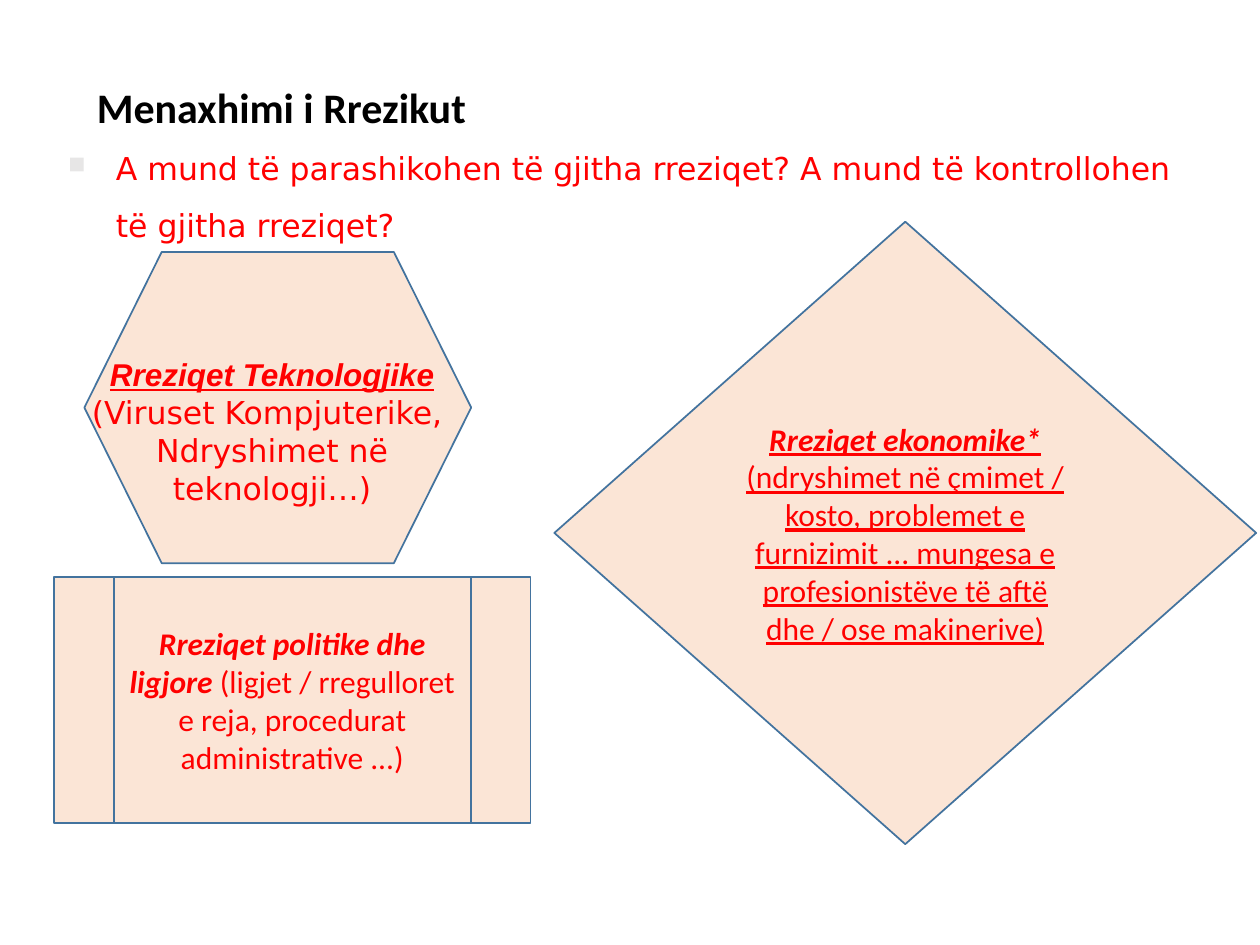
from lxml import etree
from pptx import Presentation
from pptx.dml.color import RGBColor
from pptx.enum.shapes import MSO_SHAPE
from pptx.enum.text import MSO_ANCHOR, MSO_AUTO_SIZE, PP_ALIGN
from pptx.oxml.ns import qn
from pptx.util import Inches, Pt

PROCESS = MSO_SHAPE.FLOWCHART_PREDEFINED_PROCESS
PREPARATION = MSO_SHAPE.FLOWCHART_PREPARATION
DECISION = MSO_SHAPE.FLOWCHART_DECISION
LEFT, CENTER = PP_ALIGN.LEFT, PP_ALIGN.CENTER
TOP, MIDDLE = MSO_ANCHOR.TOP, MSO_ANCHOR.MIDDLE

COLORS = {"text": "FF0000", "heading": "000000", "fill": "FBE5D6",
          "line": "43739E", "bullet": "E7E6E6"}

# A run is (text, font name, styles), with styles from b, i and u.
QUESTION = [[("A mund të parashikohen të gjitha rreziqet? "
              "A mund të kontrollohen të gjitha rreziqet?", "DejaVu Sans", "")]]
HEADING = [[("Menaxhimi i Rrezikut", "Calibri", "b")]]
TECHNOLOGY = [
    [("Rreziqet Teknologjike", "Arial", "biu")],
    [("(Viruset Kompjuterike, ", "DejaVu Sans", "")],
    [("Ndryshimet në teknologji…)", "DejaVu Sans", "")],
]
POLITICS = [[
    ("Rreziqet politike dhe ligjore ", "Calibri", "bi"),
    ("(ligjet / rregulloret e reja, procedurat administrative ...)", "Calibri", ""),
]]
ECONOMY = [[
    ("Rreziqet ekonomike* ", "Calibri", "biu"),
    ("(ndryshimet në çmimet / kosto, problemet e furnizimit ... mungesa e "
     "profesionistëve të aftë dhe / ose makinerive)", "Calibri", "u"),
]]

RISK_SHAPES = [
    (PROCESS, (0.43, 4.58, 3.78, 1.95), POLITICS),
    (PREPARATION, (0.67, 2, 3.07, 2.47), []),
    (DECISION, (4.4, 1.76, 5.57, 4.94), ECONOMY),
]
TEXT_BOXES = [
    ((0.43, 2.77, 3.46, 1.31), TECHNOLOGY, CENTER, 18, "text"),
    ((0.67, 0.6, 5, 0.5), HEADING, LEFT, 24, "heading"),
]


def rgb(name):
    return RGBColor.from_string(COLORS[name])


def write(shape, paragraphs, alignment=CENTER, size=18, color="text", anchor=MIDDLE):
    frame = shape.text_frame
    frame.word_wrap = True
    frame.auto_size = MSO_AUTO_SIZE.NONE
    frame.vertical_anchor = anchor
    for index, runs in enumerate(paragraphs):
        paragraph = frame.add_paragraph() if index else frame.paragraphs[0]
        paragraph.alignment = alignment
        for text, font_name, styles in runs:
            run = paragraph.add_run()
            run.text = text
            font = run.font
            font.name = font_name
            font.size = Pt(size)
            font.color.rgb = rgb(color)
            font.bold = "b" in styles
            font.italic = "i" in styles
            font.underline = "u" in styles


def add_bullet(paragraph, indent):
    properties = paragraph._p.get_or_add_pPr()
    properties.set("marL", str(Inches(indent)))
    properties.set("indent", str(-Inches(indent)))
    color = etree.SubElement(properties, qn("a:buClr"))
    etree.SubElement(color, qn("a:srgbClr"), val=COLORS["bullet"])
    etree.SubElement(properties, qn("a:buSzPct"), val="75000")
    etree.SubElement(properties, qn("a:buChar"), char="■")


presentation = Presentation()
presentation.slide_width, presentation.slide_height = Inches(10), Inches(7.5)
slide = presentation.slides.add_slide(presentation.slide_layouts[5])

title = slide.shapes.title
title.left, title.top, title.width, title.height = map(Inches, (0.44, 0.97, 9, 1.03))
write(title, QUESTION, LEFT)
question = title.text_frame.paragraphs[0]
add_bullet(question, 0.38)
question.line_spacing = 1.5

for kind, place, paragraphs in RISK_SHAPES:
    shape = slide.shapes.add_shape(kind, *map(Inches, place))
    shape.shadow.inherit = False
    shape.fill.solid()
    shape.fill.fore_color.rgb = rgb("fill")
    shape.line.color.rgb = rgb("line")
    shape.line.width = Pt(1)
    write(shape, paragraphs)

for place, paragraphs, alignment, size, color in TEXT_BOXES:
    text_box = slide.shapes.add_textbox(*map(Inches, place))
    write(text_box, paragraphs, alignment, size, color, TOP)

presentation.save("out.pptx")
